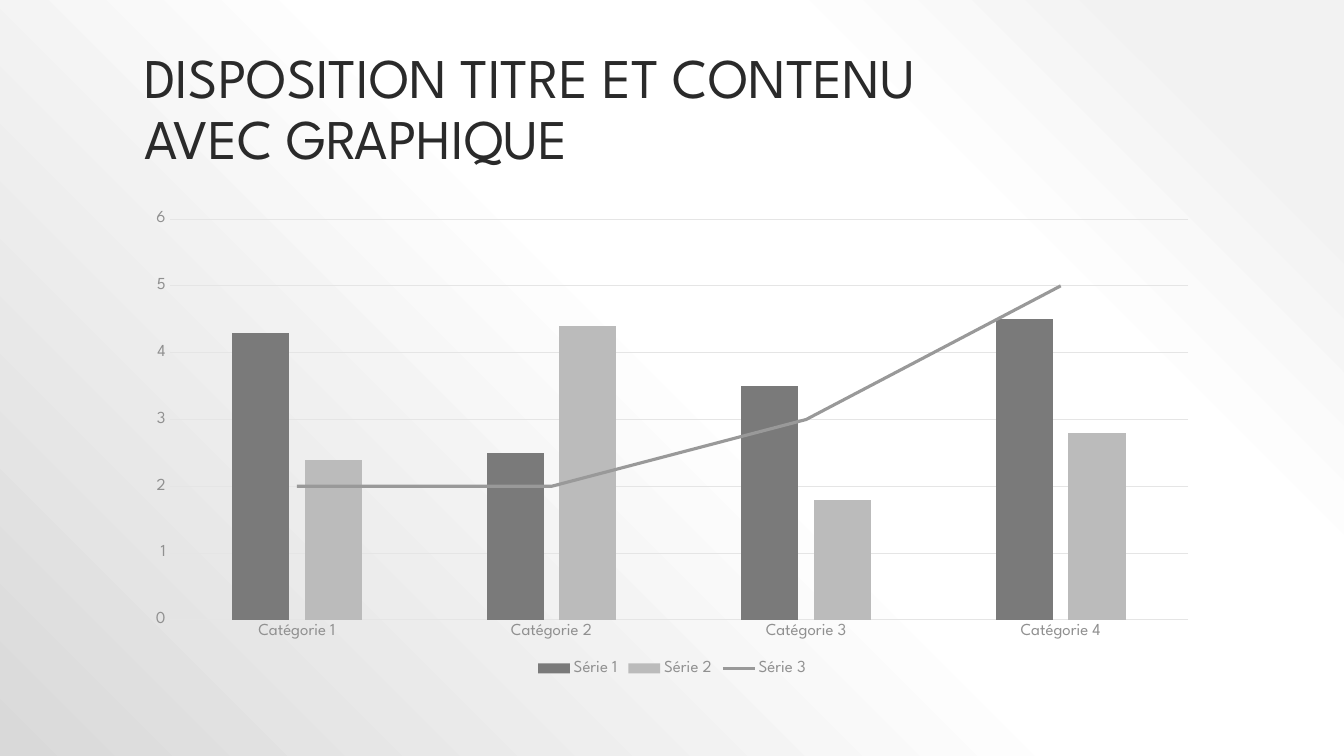
from lxml import etree
from pptx import Presentation
from pptx.chart.data import CategoryChartData
from pptx.dml.color import RGBColor
from pptx.enum import chart as ch, text
from pptx.oxml import parse_xml
from pptx.oxml.ns import nsdecls, qn
from pptx.util import Pt

TITLE = ["DISPOSITION TITRE ET CONTENU", "AVEC GRAPHIQUE"]
CATEGORIES = [f"Catégorie {n}" for n in range(1, 5)]
SERIES = {
    "Série 1": (4.3, 2.5, 3.5, 4.5),
    "Série 2": (2.4, 4.4, 1.8, 2.8),
    "Série 3": (2, 2, 3, 5),
}
THEME = {
    "font": "League Spartan",
    "title": "2A2A2A", "title_size": 40,
    "chart_text": "545454", "chart_size": 10,
    "label": "909090", "label_size": 12,
    "grid": "E5E5E5", "grid_width": 0.75,
    "series": ["7A7A7A", "BBBBBB", "999999"], "line_width": 2.25,
    "background": [(10, "F2F2F2"), (28, "FFFFFF"), (48, "FFFFFF"), (100, "D9D9D9")],
}
SLIDE_W, SLIDE_H = 960, 540
LEFT = 96
WIDTH = SLIDE_W - 2 * LEFT
TITLE_TOP, TITLE_H = 21.6, 104.4
CHART_TOP, CHART_H = 144, 342


def style_font(font, size, color):
    font.name, font.size = THEME["font"], Pt(size)
    font.color.rgb = RGBColor.from_string(color)


def style_line(line, width, color):
    line.width = Pt(width)
    line.color.rgb = RGBColor.from_string(color)


def set_background(s):
    """Radial gradient centred on the top right corner."""
    s.background.fill.gradient()
    stops = "".join(
        f'<a:gs pos="{pos * 1000}"><a:srgbClr val="{color}"/></a:gs>'
        for pos, color in THEME["background"])
    gradient = parse_xml(
        f'<a:gradFill {nsdecls("a")} rotWithShape="1"><a:gsLst>{stops}</a:gsLst>'
        '<a:path path="circle"><a:fillToRect l="100000" b="100000"/></a:path></a:gradFill>')
    old = next(s.element.iter(qn("a:gradFill")))
    old.getparent().replace(old, gradient)


def add_text(s, lines, box, *, size, color, anchor, spacing):
    tf = s.shapes.add_textbox(*map(Pt, box)).text_frame
    tf.word_wrap, tf.vertical_anchor = True, anchor
    p = tf.paragraphs[0]
    p.line_spacing = spacing
    for i, line in enumerate(lines):
        if i:
            p.add_line_break()
        r = p.add_run()
        r.text = line
        style_font(r.font, size, color)


def last_series_to_line(chart):
    """Move the last column series to a line plot on the same axes."""
    bars = chart.plots[0]
    bar_plot = chart.element.find(".//" + qn("c:barChart")) if hasattr(chart, "element") else bars._element
    ser = bar_plot.findall(qn("c:ser"))[-1]
    for flag in ser.findall(qn("c:invertIfNegative")):
        ser.remove(flag)
    line_plot = parse_xml(
        f'<c:lineChart {nsdecls("c")}><c:grouping val="standard"/>'
        '<c:varyColors val="0"/></c:lineChart>')
    line_plot.append(ser)
    etree.SubElement(line_plot, qn("c:marker")).set("val", "1")
    for axis_id in bar_plot.findall(qn("c:axId")):
        etree.SubElement(line_plot, qn("c:axId")).set("val", axis_id.get("val"))
    bar_plot.addnext(line_plot)
    return chart.plots[1].series[0]


def add_combined_chart(s):
    data = CategoryChartData()
    data.categories = CATEGORIES
    for name, values in SERIES.items():
        data.add_series(name, values)
    chart = s.shapes.add_chart(
        ch.XL_CHART_TYPE.COLUMN_CLUSTERED,
        Pt(LEFT), Pt(CHART_TOP), Pt(WIDTH), Pt(CHART_H), data).chart
    chart.has_title = False
    style_font(chart.font, THEME["chart_size"], THEME["chart_text"])

    chart.has_legend = True
    chart.legend.position = ch.XL_LEGEND_POSITION.BOTTOM
    chart.legend.include_in_layout = False
    style_font(chart.legend.font, THEME["label_size"], THEME["label"])

    categories, values = chart.category_axis, chart.value_axis
    for axis in (categories, values):
        axis.major_tick_mark = axis.minor_tick_mark = ch.XL_TICK_MARK.NONE
        style_font(axis.tick_labels.font, THEME["label_size"], THEME["label"])
    values.minimum_scale, values.maximum_scale, values.major_unit = 0, 6, 1
    values.has_major_gridlines = True
    values.format.line.fill.background()
    for line in (categories.format.line, values.major_gridlines.format.line):
        style_line(line, THEME["grid_width"], THEME["grid"])

    bars = chart.plots[0]
    bars.gap_width, bars.overlap, bars.vary_by_categories = 219, -27, False
    trend = last_series_to_line(chart)
    trend.smooth = False
    trend.marker.style = ch.XL_MARKER_STYLE.NONE
    *bar_colors, trend_color = THEME["series"]
    style_line(trend.format.line, THEME["line_width"], trend_color)
    for series, color in zip(bars.series, bar_colors):
        series.invert_if_negative = False
        series.format.fill.solid()
        series.format.fill.fore_color.rgb = RGBColor.from_string(color)


def main():
    prs = Presentation()
    prs.slide_width, prs.slide_height = Pt(SLIDE_W), Pt(SLIDE_H)
    s = prs.slides.add_slide(prs.slide_layouts[6])
    set_background(s)
    add_text(s, TITLE, (LEFT, TITLE_TOP, WIDTH, TITLE_H),
             size=THEME["title_size"], color=THEME["title"],
             anchor=text.MSO_ANCHOR.BOTTOM, spacing=0.9)
    add_combined_chart(s)
    prs.save("out.pptx")


if __name__ == "__main__":
    main()
